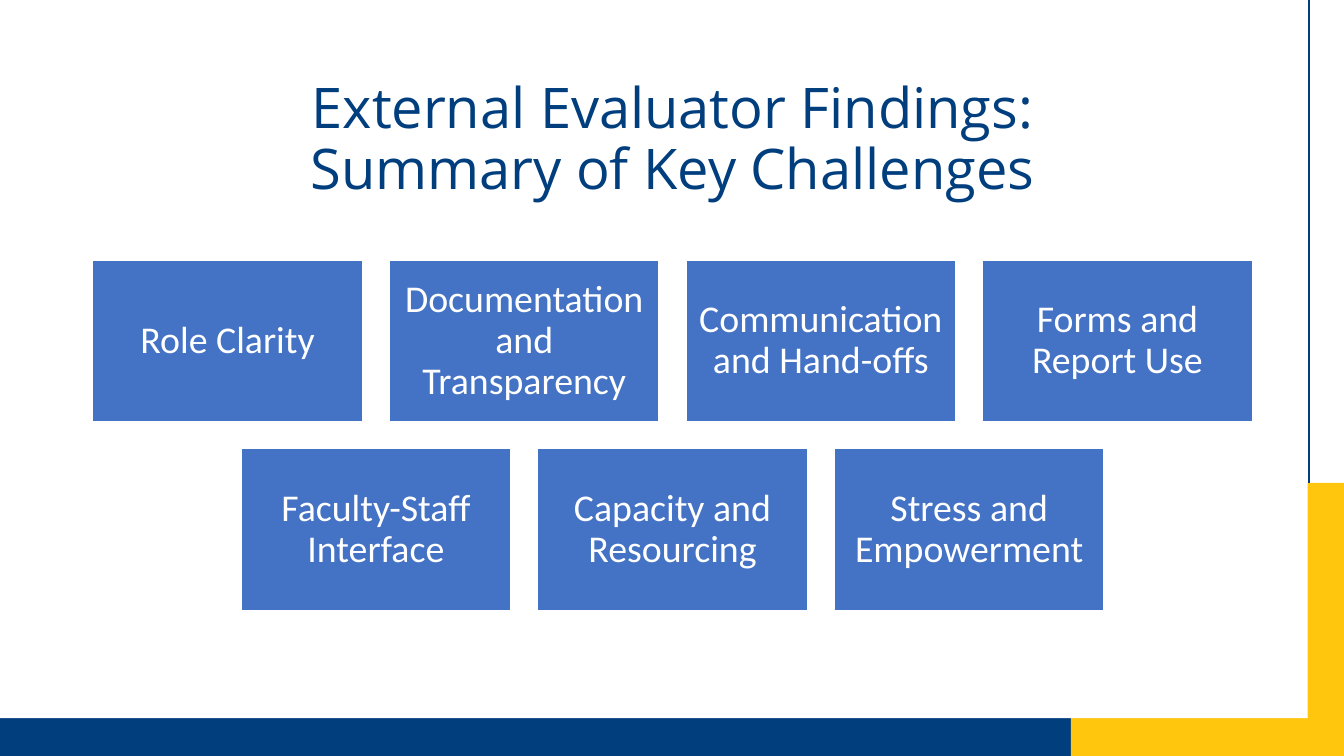
from collections import namedtuple
from dataclasses import dataclass

from lxml.etree import SubElement
from pptx import Presentation
from pptx.dml.color import RGBColor as Color
from pptx.enum.shapes import MSO_CONNECTOR as Connector, MSO_SHAPE as Shape
from pptx.enum.text import MSO_ANCHOR as Anchor, PP_ALIGN as Align
from pptx.oxml.ns import qn
from pptx.util import Inches, Pt

Box = namedtuple("Box", "left top width height")


@dataclass(frozen=True)
class Theme:
    navy: str = "013E7D"
    title: str = "003E7D"
    gold: str = "FFC60D"
    tile: str = "4472C4"
    white: str = "FFFFFF"
    title_font: str = "Open Sans"
    tile_font: str = "Calibri"
    title_size: int = 40
    tile_size: int = 27
    rule_width: float = 1.5
    tile_border: float = 1


THEME = Theme()
PAGE = Box(0, 0, 13.33, 7.5)
TITLE_BOX = Box(0.92, 0.67, 11.5, 1.45)
TILES_BOX = Box(0.92, 2.58, 11.5, 3.47)
COLUMNS = 4
GAP_SHARE = 0.1
HEIGHT_SHARE = 0.6
TITLE_LINES = ["External Evaluator Findings:", "Summary of Key Challenges"]
CHALLENGES = [
    "Role Clarity",
    "Documentation and Transparency",
    "Communication and Hand-offs",
    "Forms and Report Use",
    "Faculty-Staff Interface",
    "Capacity and Resourcing",
    "Stress and Empowerment",
]


def apply_format(target, values):
    for name, value in values.items():
        setattr(target, name, value)


def add_rectangle(page, box, fill, border=None):
    shape = page.shapes.add_shape(Shape.RECTANGLE, *map(Inches, box))
    shape.shadow.inherit = False
    shape.fill.solid()
    shape.fill.fore_color.rgb = Color.from_string(fill)
    if border:
        shape.line.color.rgb = Color.from_string(border)
        shape.line.width = Pt(THEME.tile_border)
    else:
        shape.line.fill.background()
    return shape


def write_text(shape, lines, font, size, color, inset):
    frame = shape.text_frame
    margins = ("margin_left", "margin_top", "margin_right", "margin_bottom")
    apply_format(frame, dict.fromkeys(margins, Inches(inset)))
    apply_format(frame, {"word_wrap": True, "vertical_anchor": Anchor.MIDDLE})
    para = frame.paragraphs[0]
    apply_format(para, {"alignment": Align.CENTER, "line_spacing": 0.9})
    for index, line in enumerate(lines):
        if index:
            para.add_line_break()
        span = para.add_run()
        span.text = line
        apply_format(span.font, {"name": font, "size": Pt(size)})
        span.font.color.rgb = Color.from_string(color)


def draw_frame(page, box):
    band = box.height * 0.05
    corner = 2.71
    corner_left = box.left + box.width - corner
    corner_top = box.top + box.height - corner
    rule_left = box.left + box.width - 0.35
    base = box.top + box.height - band
    add_rectangle(page, Box(box.left, base, box.width, band), THEME.navy)
    add_rectangle(page, Box(corner_left, corner_top, corner, corner), THEME.gold)
    add_rectangle(page, Box(box.left, box.top, box.width - 0.36, base - box.top), THEME.white)
    ends = (rule_left, box.top, rule_left, corner_top)
    rule = page.shapes.add_connector(Connector.STRAIGHT, *map(Inches, ends))
    rule.line.color.rgb = Color.from_string(THEME.navy)
    rule.line.width = Pt(THEME.rule_width)
    SubElement(rule.element.spPr, qn("a:effectLst"))


def draw_title(page, box):
    shape = page.shapes.add_textbox(*map(Inches, box))
    write_text(shape, TITLE_LINES, THEME.title_font, THEME.title_size, THEME.title, 0.05)


def draw_tiles(page, box):
    width = box.width / (COLUMNS + (COLUMNS - 1) * GAP_SHARE)
    height = width * HEIGHT_SHARE
    gap = width * GAP_SHARE
    for row, start in enumerate(range(0, len(CHALLENGES), COLUMNS)):
        names = CHALLENGES[start:start + COLUMNS]
        row_width = len(names) * (width + gap) - gap
        row_left = box.left + (box.width - row_width) / 2
        top = box.top + row * (height + gap)
        for column, name in enumerate(names):
            place = Box(row_left + column * (width + gap), top, width, height)
            tile = add_rectangle(page, place, THEME.tile, THEME.white)
            write_text(tile, [name], THEME.tile_font, THEME.tile_size, THEME.white, 0.11)


def main():
    deck = Presentation()
    apply_format(deck, {"slide_width": Inches(PAGE.width), "slide_height": Inches(PAGE.height)})
    page = deck.slides.add_slide(deck.slide_layouts[6])
    draw_frame(page, PAGE)
    draw_title(page, TITLE_BOX)
    draw_tiles(page, TILES_BOX)
    deck.save("out.pptx")


if __name__ == "__main__":
    main()
